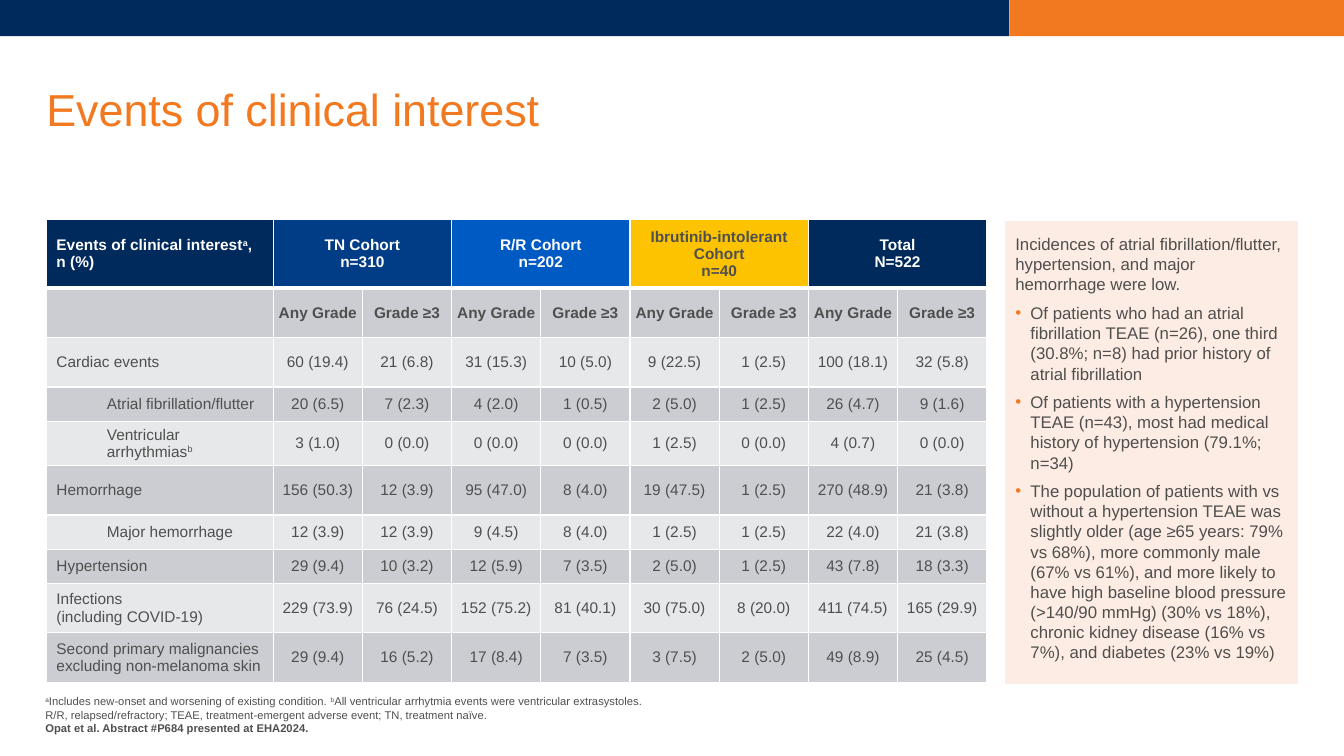
import pptx
import pptx.dml.color
import pptx.enum.shapes
import pptx.enum.text
import pptx.oxml
import pptx.oxml.ns
import pptx.util
from pptx.util import Inches

RGBColor = pptx.dml.color.RGBColor
Anchor = pptx.enum.text.MSO_ANCHOR
Align = pptx.enum.text.PP_ALIGN

NAVY = RGBColor(0x00, 0x2A, 0x5C)
BLUE = RGBColor(0x00, 0x3D, 0x86)
BRIGHT_BLUE = RGBColor(0x00, 0x5A, 0xC4)
YELLOW = RGBColor(0xFD, 0xC3, 0x00)
ORANGE = RGBColor(0xF3, 0x79, 0x20)
PEACH = RGBColor(0xFD, 0xEC, 0xE3)
GRAY = RGBColor(0x4E, 0x4F, 0x4E)
DARK_BAND = RGBColor(0xCC, 0xCD, 0xD2)
LIGHT_BAND = RGBColor(0xE7, 0xE8, 0xEA)
WHITE = RGBColor(0xFF, 0xFF, 0xFF)


def write(para, text, size=11, color=GRAY, bold=False, align=Align.LEFT):
    """Fill a paragraph; ^x^ is superscript and a newline is a line break."""
    para.alignment = align
    for index, part in enumerate(text.split("^")):
        for line_number, line in enumerate(part.split("\n")):
            if line_number:
                para.add_line_break()
            if not line:
                continue
            span = para.add_run()
            span.text = line
            span.font.name = "Arial"
            span.font.size = pptx.util.Pt(size)
            span.font.bold = bold
            span.font.color.rgb = color
            if index % 2:
                span.font._element.set("baseline", "30000")


def add_xml(parent, xml):
    namespace = pptx.oxml.ns.nsdecls("a")
    parent.append(pptx.oxml.parse_xml(xml.replace(" ", f" {namespace} ", 1)))


deck = pptx.Presentation()
deck.slide_width = Inches(13.33)
deck.slide_height = Inches(7.5)
page = deck.slides.add_slide(deck.slide_layouts[1])

# Top band
for left, width, color in [(0, 10.01, NAVY), (10.01, 3.32, ORANGE)]:
    band = page.shapes.add_shape(pptx.enum.shapes.MSO_SHAPE.RECTANGLE,
                                 Inches(left), 0, Inches(width), Inches(0.36))
    band.shadow.inherit = False
    band.fill.solid()
    band.fill.fore_color.rgb = color
    band.line.fill.background()

# Title and footnotes
title = page.shapes.title
title.left, title.top = Inches(0.46), Inches(0.63)
title.width, title.height = Inches(12.43), Inches(0.72)
footnotes = page.shapes.add_textbox(Inches(0.45), Inches(6.87), Inches(9.33), Inches(0.42))
for box in (title, footnotes):
    frame = box.text_frame
    frame.word_wrap = True
    frame.auto_size = pptx.enum.text.MSO_AUTO_SIZE.NONE
    frame.vertical_anchor = Anchor.BOTTOM
    frame.margin_left = frame.margin_right = frame.margin_top = frame.margin_bottom = 0

title_para = title.text_frame.paragraphs[0]
title_para.line_spacing = 0.9
write(title_para, "Events of clinical interest", size=32, color=ORANGE)

footnote_lines = [
    ("^a^Includes new-onset and worsening of existing condition. "
     "^b^All ventricular arrhytmia events were ventricular extrasystoles.", False),
    ("R/R, relapsed/refractory; TEAE, treatment-emergent adverse event; "
     "TN, treatment naïve.", False),
    ("Opat et al. Abstract #P684 presented at EHA2024.", True),
]
for index, (text, bold) in enumerate(footnote_lines):
    frame = footnotes.text_frame
    para = frame.add_paragraph() if index else frame.paragraphs[0]
    write(para, text, size=8, bold=bold)

# Events table
cohorts = [
    (["TN Cohort", "n=310"], BLUE, WHITE),
    (["R/R Cohort", "n=202"], BRIGHT_BLUE, WHITE),
    (["Ibrutinib-intolerant Cohort", "n=40"], YELLOW, GRAY),
    (["Total", "N=522"], NAVY, WHITE),
]
# Each event: row height, indent level, label, values
events = [
    (0.49, 0, "Cardiac events", ["60 (19.4)", "21 (6.8)", "31 (15.3)", "10 (5.0)",
                                 "9 (22.5)", "1 (2.5)", "100 (18.1)", "32 (5.8)"]),
    (0.34, 1, "Atrial fibrillation/flutter", ["20 (6.5)", "7 (2.3)", "4 (2.0)", "1 (0.5)",
                                              "2 (5.0)", "1 (2.5)", "26 (4.7)", "9 (1.6)"]),
    (0.34, 1, "Ventricular arrhythmias^b^", ["3 (1.0)", "0 (0.0)", "0 (0.0)", "0 (0.0)",
                                             "1 (2.5)", "0 (0.0)", "4 (0.7)", "0 (0.0)"]),
    (0.49, 0, "Hemorrhage", ["156 (50.3)", "12 (3.9)", "95 (47.0)", "8 (4.0)",
                             "19 (47.5)", "1 (2.5)", "270 (48.9)", "21 (3.8)"]),
    (0.34, 1, "Major hemorrhage", ["12 (3.9)", "12 (3.9)", "9 (4.5)", "8 (4.0)",
                                   "1 (2.5)", "1 (2.5)", "22 (4.0)", "21 (3.8)"]),
    (0.34, 0, "Hypertension", ["29 (9.4)", "10 (3.2)", "12 (5.9)", "7 (3.5)",
                               "2 (5.0)", "1 (2.5)", "43 (7.8)", "18 (3.3)"]),
    (0.49, 0, "Infections\n(including COVID-19)",
     ["229 (73.9)", "76 (24.5)", "152 (75.2)", "81 (40.1)",
      "30 (75.0)", "8 (20.0)", "411 (74.5)", "165 (29.9)"]),
    (0.49, 0, "Second primary malignancies excluding non-melanoma skin",
     ["29 (9.4)", "16 (5.2)", "17 (8.4)", "7 (3.5)",
      "3 (7.5)", "2 (5.0)", "49 (8.9)", "25 (4.5)"]),
]
grades = (0.49, 0, "", ["Any Grade", "Grade ≥3"] * len(cohorts))
body_rows = [grades] + events

table = page.shapes.add_table(len(body_rows) + 1, 9, Inches(0.46), Inches(2.18),
                              Inches(9.33), Inches(4.49)).table
table.horz_banding = False
for index, column in enumerate(table.columns):
    column.width = Inches(0.885 if index else 2.25)
table.rows[0].height = Inches(0.68)

for row_index, row in enumerate(table.rows):
    for column_index, cell in enumerate(row.cells):
        cell.vertical_anchor = Anchor.MIDDLE
        if column_index:
            cell.margin_left = cell.margin_right = Inches(0.04)
        for side in "LRTB":
            thick = (row_index, side) in [(0, "B"), (1, "T")]
            add_xml(cell._tc.get_or_add_tcPr(),
                    f'<a:ln{side} w="{38100 if thick else 12700}"><a:solidFill>'
                    f'<a:srgbClr val="{WHITE}"/></a:solidFill></a:ln{side}>')
        if row_index == 0:
            fill = cohorts[(column_index - 1) // 2][1] if column_index else NAVY
        else:
            fill = DARK_BAND if row_index % 2 else LIGHT_BAND
        cell.fill.solid()
        cell.fill.fore_color.rgb = fill

write(table.cell(0, 0).text_frame.paragraphs[0], "Events of clinical interest^a^, n (%)",
      color=WHITE, bold=True)
for index, (lines, fill, color) in enumerate(cohorts):
    cell = table.cell(0, 2 * index + 1)
    cell.merge(table.cell(0, 2 * index + 2))
    frame = cell.text_frame
    write(frame.paragraphs[0], lines[0], color=color, bold=True, align=Align.CENTER)
    write(frame.add_paragraph(), lines[1], color=color, bold=True, align=Align.CENTER)

for row_index, (height, level, label, values) in enumerate(body_rows, start=1):
    table.rows[row_index].height = Inches(height)
    label_para = table.cell(row_index, 0).text_frame.paragraphs[0]
    if level:
        label_para.level = level
        label_para._p.get_or_add_pPr().set("marL", str(Inches(0.5)))
    write(label_para, label)
    for column_index, value in enumerate(values, start=1):
        write(table.cell(row_index, column_index).text_frame.paragraphs[0], value,
              bold=row_index == 1, align=Align.CENTER)

# Findings panel
findings = [
    "Incidences of atrial fibrillation/flutter, hypertension, and major hemorrhage were low.",
    "Of patients who had an atrial fibrillation TEAE (n=26), one third (30.8%; n=8) "
    "had prior history of atrial fibrillation",
    "Of patients with a hypertension TEAE (n=43), most had medical history of "
    "hypertension (79.1%; n=34)",
    "The population of patients with vs without a hypertension TEAE was slightly older "
    "(age ≥65 years: 79% vs 68%), more commonly male (67% vs 61%), and more likely to have "
    "high baseline blood pressure (>140/90 mmHg) (30% vs 18%), chronic kidney disease "
    "(16% vs 7%), and diabetes (23% vs 19%)",
]
panel = page.placeholders[1]
panel.left, panel.top = Inches(9.97), Inches(2.2)
panel.width, panel.height = Inches(2.9), Inches(4.58)
panel.fill.solid()
panel.fill.fore_color.rgb = PEACH
panel.line.color.rgb = PEACH
panel.line.width = pptx.util.Pt(1)
frame = panel.text_frame
frame.word_wrap = True
frame.auto_size = pptx.enum.text.MSO_AUTO_SIZE.NONE
frame.vertical_anchor = Anchor.TOP
frame.margin_left = frame.margin_right = Inches(0.1)
frame.margin_top, frame.margin_bottom = Inches(0.12), Inches(0.05)
for index, text in enumerate(findings):
    para = frame.add_paragraph() if index else frame.paragraphs[0]
    properties = para._p.get_or_add_pPr()
    indent = Inches(0.15) if index else 0
    properties.set("marL", str(indent))
    properties.set("indent", str(-indent))
    if index:
        add_xml(properties, f'<a:buClr ><a:srgbClr val="{ORANGE}"/></a:buClr>')
        add_xml(properties, '<a:buFont typeface="Arial"/>')
        add_xml(properties, '<a:buChar char="•"/>')
    else:
        add_xml(properties, '<a:buNone />')
    para.space_before = pptx.util.Pt(0)
    para.space_after = pptx.util.Pt(6 if index < len(findings) - 1 else 0)
    write(para, text, size=12)

deck.save("out.pptx")
